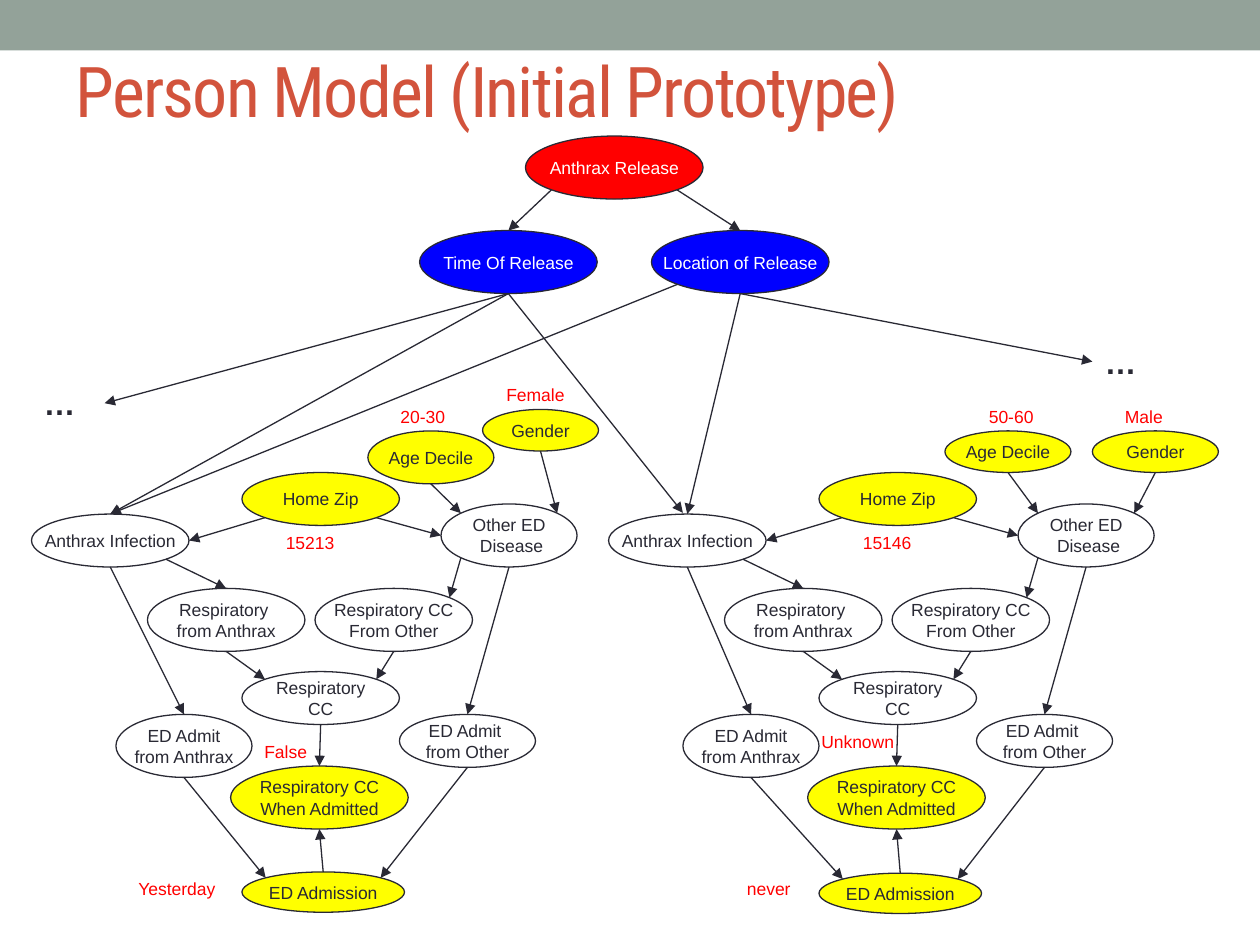
from math import cos, pi, sin

from lxml.etree import SubElement
from pptx import Presentation
from pptx.dml.color import RGBColor
from pptx.enum.shapes import MSO_CONNECTOR, MSO_SHAPE
from pptx.enum.text import MSO_ANCHOR, MSO_AUTO_SIZE, PP_ALIGN
from pptx.oxml.ns import qn
from pptx.util import Inches, Pt

COLORS = {"bar": "93A299", "title": "D2533C", "ink": "292934", "white": "FFFFFF",
          "red": "FF0000", "blue": "0000FF", "yellow": "FFFF00"}
ANGLES = {"right": 0, "bottom right": 45, "bottom": 90, "bottom left": 135,
          "left": 180, "top left": 225, "top": 270, "top right": 315}

RELEASE_NODES = {
    "release": ("Anthrax Release", 4.17, 1.08, 1.41, 0.5, "red"),
    "location": ("Location of Release", 5.17, 1.83, 1.41, 0.5, "blue"),
    "time": ("Time Of Release", 3.33, 1.83, 1.41, 0.5, "blue"),
}
PERSON_NODES = {
    "infection": ("Anthrax Infection", 0.25, 4.08, 1.25, 0.42, None),
    "zip": ("Home Zip", 1.92, 3.75, 1.25, 0.42, "yellow"),
    "respiratory anthrax": ("Respiratory \nfrom Anthrax", 1.17, 4.67, 1.25, 0.5, None),
    "disease": ("Other ED\n Disease", 3.5, 4, 1.08, 0.5, None),
    "respiratory other": ("Respiratory CC\nFrom Other", 2.5, 4.67, 1.25, 0.5, None),
    "respiratory": ("Respiratory\nCC", 1.92, 5.33, 1.25, 0.42, None),
    "when admitted": ("Respiratory CC\nWhen Admitted", 1.83, 6.08, 1.41, 0.5, "yellow"),
    "admit other": ("ED Admit \nfrom Other", 3.17, 5.67, 1.08, 0.42, None),
}
PERSON_ARROWS = [
    ("zip", "bottom left", "infection", "right"),
    ("zip", "bottom right", "disease", "left"),
    ("age", "bottom", "disease", "top left"),
    ("gender", "bottom", "disease", "top right"),
    ("disease", "bottom", "admit other", "top"),
    ("disease", "bottom left", "respiratory other", "top right"),
    ("infection", "bottom", "admit anthrax", "top"),
    ("infection", "bottom right", "respiratory anthrax", "top"),
    ("respiratory anthrax", "bottom", "respiratory", "top left"),
    ("respiratory other", "bottom", "respiratory", "top right"),
    ("respiratory", "bottom", "when admitted", "top"),
    ("admit anthrax", "bottom", "admission", "top left"),
    ("admit other", "bottom", "admission", "top right"),
    ("admission", "top", "when admitted", "bottom"),
]
PERSON_OFFSET = 4.58
PEOPLE = [
    {
        "gender": ("Gender", 3.83, 3.25, 0.92, 0.33, "yellow"),
        "age": ("Age Decile", 2.92, 3.42, 1, 0.42, "yellow"),
        "admit anthrax": ("ED Admit\nfrom Anthrax", 0.92, 5.67, 1.08, 0.5, None),
        "admission": ("ED Admission", 1.92, 6.92, 1.29, 0.32, "yellow"),
    },
    {
        "gender": ("Gender", 8.67, 3.42, 1, 0.33, "yellow"),
        "age": ("Age Decile", 7.5, 3.42, 1, 0.33, "yellow"),
        "admit anthrax": ("ED Admit\nfrom Anthrax", 5.42, 5.67, 1.08, 0.5, None),
        "admission": ("ED Admission", 6.5, 6.93, 1.29, 0.32, "yellow"),
    },
]
EVIDENCE = [
    ("Yesterday", 1, 6.92, 0.83), ("never", 5.83, 6.92, 0.67),
    ("False", 2, 5.83, 0.67), ("15213", 2.17, 4.17, 0.67),
    ("20-30", 3.08, 3.17, 0.67), ("Female", 3.92, 3, 0.67),
    ("Unknown", 6.42, 5.75, 0.83), ("15146", 6.75, 4.17, 0.83),
    ("50-60", 7.75, 3.17, 0.83), ("Male", 8.83, 3.17, 0.83),
]


def color(name):
    """Return the named colour."""
    return RGBColor.from_string(COLORS[name])


def format_text(text_frame, size, color_name, font="Arial", bold=False, align=None):
    """Format every run of a text frame."""
    for paragraph in text_frame.paragraphs:
        paragraph.alignment = align
        for run in paragraph.runs:
            run.font.size = Pt(size)
            run.font.name = font
            run.font.bold = bold
            run.font.color.rgb = color(color_name)


def add_bar(slide):
    """Draw the band along the top edge."""
    bar = slide.shapes.add_shape(MSO_SHAPE.RECTANGLE, 0, 0, Inches(10), Inches(0.4))
    bar.shadow.inherit = False
    bar.fill.solid()
    bar.fill.fore_color.rgb = color("bar")
    bar.line.fill.background()


def set_title(slide, text):
    """Place and format the title."""
    title = slide.shapes.title
    title.left, title.top = Inches(0.5), Inches(0.21)
    title.width, title.height = Inches(9), Inches(1)
    text_frame = title.text_frame
    text_frame.text = text
    text_frame.auto_size = MSO_AUTO_SIZE.NONE
    text_frame.vertical_anchor = MSO_ANCHOR.MIDDLE
    format_text(text_frame, 40, "title", "Roboto Condensed", align=PP_ALIGN.LEFT)
    text_frame.paragraphs[0].runs[0]._r.get_or_add_rPr().set("spc", "-100")


def add_node(slide, text, left, top, width, height, fill):
    """Draw one oval variable of the network."""
    node = slide.shapes.add_shape(MSO_SHAPE.FLOWCHART_CONNECTOR, Inches(left),
                                  Inches(top), Inches(width), Inches(height))
    node.shadow.inherit = False
    if fill:
        node.fill.solid()
        node.fill.fore_color.rgb = color(fill)
    else:
        node.fill.background()
    node.line.color.rgb = color("ink")
    node.line.width = Pt(0.75)
    node.text_frame.text = text
    node.text_frame.word_wrap = False
    node.text_frame.vertical_anchor = MSO_ANCHOR.MIDDLE
    text_color = "white" if fill in ("red", "blue") else "ink"
    format_text(node.text_frame, 10, text_color, align=PP_ALIGN.CENTER)
    return node


def site(node, side):
    """Return the point on an oval's edge at the given side."""
    angle = ANGLES[side] * pi / 180
    return (int(node.left + node.width / 2 * (1 + cos(angle))),
            int(node.top + node.height / 2 * (1 + sin(angle))))


def add_arrow(slide, start, end):
    """Draw an arrow between two points."""
    arrow = slide.shapes.add_connector(MSO_CONNECTOR.STRAIGHT, *start, *end)
    arrow.line.color.rgb = color("ink")
    arrow.line.width = Pt(0.75)
    SubElement(arrow.line._get_or_add_ln(), qn("a:tailEnd"), type="triangle")
    SubElement(arrow._element.spPr, qn("a:effectLst"))


def add_label(slide, text, left, top, width, height=0.27, size=10,
              color_name="red", bold=False):
    """Add a text label."""
    label = slide.shapes.add_textbox(Inches(left), Inches(top),
                                     Inches(width), Inches(height))
    label.text_frame.word_wrap = True
    label.text_frame.text = text
    format_text(label.text_frame, size, color_name, bold=bold)


def add_person(slide, offset, own_nodes):
    """Draw one person's part of the network and return its infection node."""
    nodes = {name: add_node(slide, text, left + offset, *rest)
             for name, (text, left, *rest) in PERSON_NODES.items()}
    nodes.update({name: add_node(slide, *values) for name, values in own_nodes.items()})
    for source, source_side, target, target_side in PERSON_ARROWS:
        add_arrow(slide, site(nodes[source], source_side), site(nodes[target], target_side))
    return nodes["infection"]


def main():
    """Build the slide and save it."""
    presentation = Presentation()
    presentation.slide_width, presentation.slide_height = Inches(10), Inches(7.5)
    slide = presentation.slides.add_slide(presentation.slide_layouts[5])
    add_bar(slide)
    set_title(slide, "Person Model (Initial Prototype)")
    release, location, time = [add_node(slide, *values) for values in RELEASE_NODES.values()]
    first, second = [site(add_person(slide, index * PERSON_OFFSET, own_nodes), "top")
                     for index, own_nodes in enumerate(PEOPLE)]
    time_end, location_end = site(time, "bottom"), site(location, "bottom")
    for start, end in [
        (site(release, "bottom left"), site(time, "top")),
        (site(release, "bottom right"), site(location, "top")),
        (time_end, first),
        (site(location, "bottom left"), first),
        (time_end, (Inches(5.42), Inches(4.07))),
        (location_end, second),
        (time_end, (Inches(0.83), Inches(3.2))),
        (location_end, (Inches(8.67), Inches(2.87))),
    ]:
        add_arrow(slide, start, end)
    for left, top in [(0.25, 3), (8.67, 2.67)]:
        add_label(slide, "…", left, top, 0.58, 0.4, 18, "ink", True)
    for evidence in EVIDENCE:
        add_label(slide, *evidence)
    presentation.save("out.pptx")


if __name__ == "__main__":
    main()
